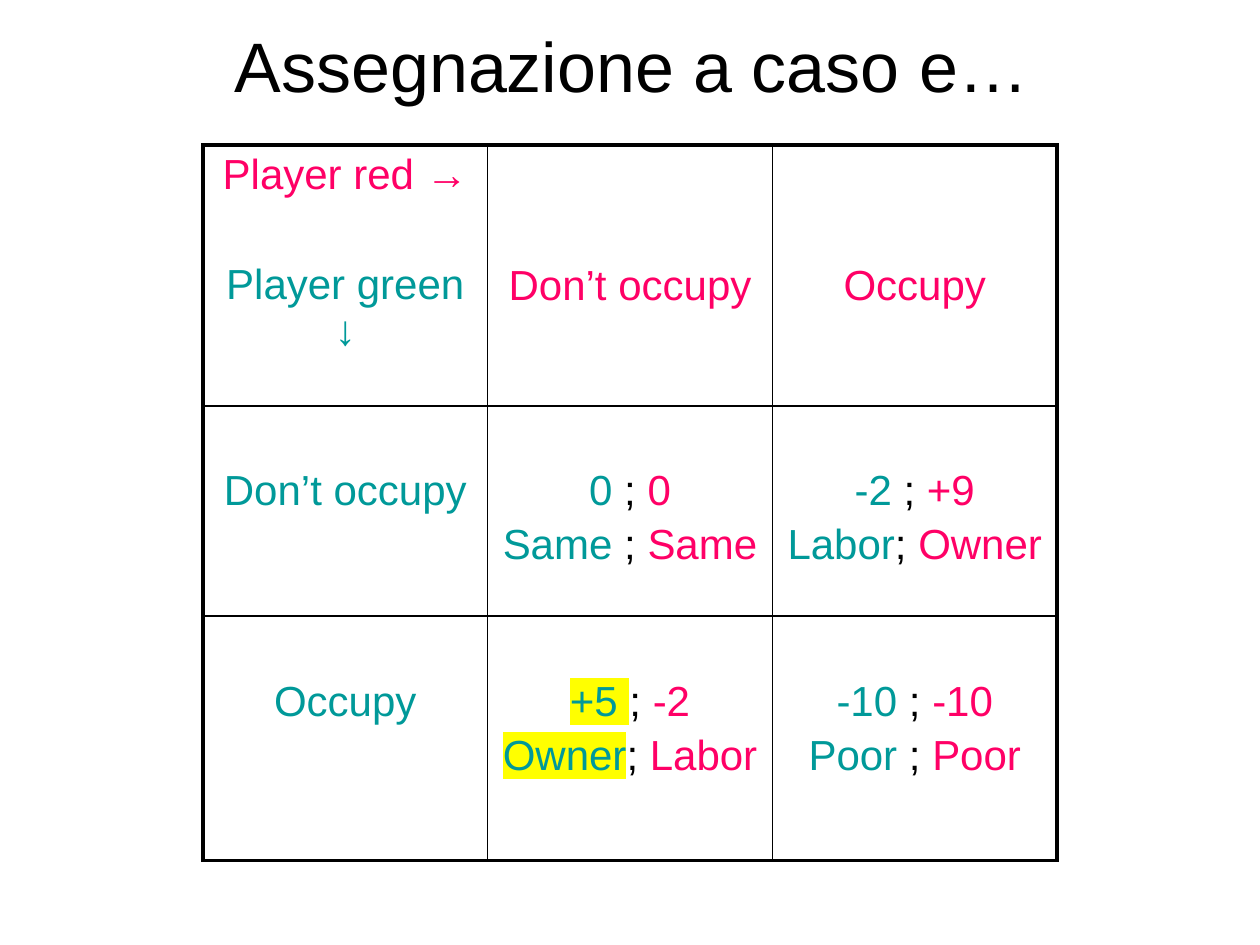
from lxml import etree
from pptx import Presentation
from pptx import util as u
from pptx.dml.color import RGBColor
from pptx.enum import text
from pptx.oxml.ns import qn

RED, GREEN, BLACK, WHITE, YELLOW = "FF0066", "009999", "000000", "FFFFFF", "FFFF00"
LINE_PITCH = u.Cm(1.12)
SEMI = ("; ", BLACK)
SPACED = (" ; ", BLACK)

# Each cell: (empty lines above, paragraphs); each run: (text, colour[, highlight])
PAYOFFS = [
    [(0, [[("Player red →", RED)], [("Player green ↓", GREEN)]]),
     (2, [[("Don’t occupy", RED)]]),
     (2, [[("Occupy", RED)]])],
    [(1, [[("Don’t occupy", GREEN)]]),
     (1, [[("0 ", GREEN), SEMI, ("0", RED)],
          [("Same", GREEN), SPACED, ("Same", RED)]]),
     (1, [[("-2", GREEN), SPACED, ("+9", RED)],
          [("Labor", GREEN), SEMI, ("Owner", RED)]])],
    [(1, [[("Occupy", GREEN)]]),
     (1, [[("+5", GREEN, YELLOW), (" ", BLACK, YELLOW), SEMI, ("-2", RED)],
          [("Owner", GREEN, YELLOW), SEMI, ("Labor", RED)]]),
     (1, [[("-10", GREEN), SPACED, ("-10", RED)],
          [("Poor", GREEN), SPACED, ("Poor", RED)]])],
]


def rgb(value):
    return RGBColor.from_string(value)


def add_text(p, content, color=BLACK, highlight=None, size=24, font="Arial"):
    r = p.add_run()
    r.text = content
    r.font.size = u.Pt(size)
    r.font.name = font
    r.font.color.rgb = rgb(color)
    if highlight:
        mark = etree.Element(qn("a:highlight"))
        etree.SubElement(mark, qn("a:srgbClr"), val=highlight)
        r.font._element.find(qn("a:solidFill")).addnext(mark)
    p.alignment = text.PP_ALIGN.CENTER


def set_borders(cell, widths):
    """Draw the left, right, top and bottom lines, widths in points."""
    tc_pr = cell._tc.get_or_add_tcPr()
    for side, width in zip("LRTB", widths):
        ln = etree.SubElement(tc_pr, qn("a:ln" + side), w=str(u.Pt(width)))
        fill = etree.SubElement(ln, qn("a:solidFill"))
        etree.SubElement(fill, qn("a:srgbClr"), val=BLACK)


def fill_cell(cell, lines_above, paragraphs, gap):
    cell.fill.solid()
    cell.fill.fore_color.rgb = rgb(WHITE)
    cell.margin_left = cell.margin_right = u.Cm(0.25)
    cell.margin_top = u.Cm(0.13) + lines_above * LINE_PITCH
    cell.margin_bottom = u.Cm(0.13)
    tf = cell.text_frame
    for i, runs in enumerate(paragraphs):
        p = tf.add_paragraph() if i else tf.paragraphs[0]
        if i:
            p.space_before = gap
        for run in runs:
            add_text(p, *run)


def add_title(slide, left, top, width, height):
    sp = slide.shapes.title
    sp.left, sp.top, sp.width, sp.height = left, top, width, height
    tf = sp.text_frame
    tf.word_wrap = True
    tf.auto_size = text.MSO_AUTO_SIZE.NONE
    tf.vertical_anchor = text.MSO_ANCHOR.TOP
    add_text(tf.paragraphs[0], "Assegnazione a caso e…", size=40)


def add_payoff_table(slide, left, top, width, row_heights):
    n_rows, n_cols = len(PAYOFFS), len(PAYOFFS[0])
    table = slide.shapes.add_table(n_rows, n_cols, left, top, width, sum(row_heights)).table
    table.first_row = table.horz_banding = False
    for column in table.columns:
        column.width = width // n_cols
    for i, (row, height) in enumerate(zip(table.rows, row_heights)):
        row.height = height
        for j, (lines_above, paragraphs) in enumerate(PAYOFFS[i]):
            cell = table.cell(i, j)
            # Thick outer frame, thin inner grid
            outer = (j == 0, j == n_cols - 1, i == 0, i == n_rows - 1)
            set_borders(cell, [2.25 if edge else 1 for edge in outer])
            # The corner cell keeps its two players one line apart
            gap = u.Pt(36) if (i, j) == (0, 0) else u.Pt(4.2)
            fill_cell(cell, lines_above, paragraphs, gap)


def main():
    prs = Presentation()
    prs.slide_width, prs.slide_height = u.Cm(25.4), u.Cm(19.05)
    slide = prs.slides.add_slide(prs.slide_layouts[5])
    add_title(slide, 0, u.Cm(0.33), u.Cm(25.45), u.Cm(1.96))
    add_payoff_table(slide, u.Cm(4.09), u.Cm(2.92), u.Cm(17.22),
                     [u.Cm(5.26), u.Cm(4.24), u.Cm(4.93)])
    prs.save("out.pptx")


if __name__ == "__main__":
    main()
